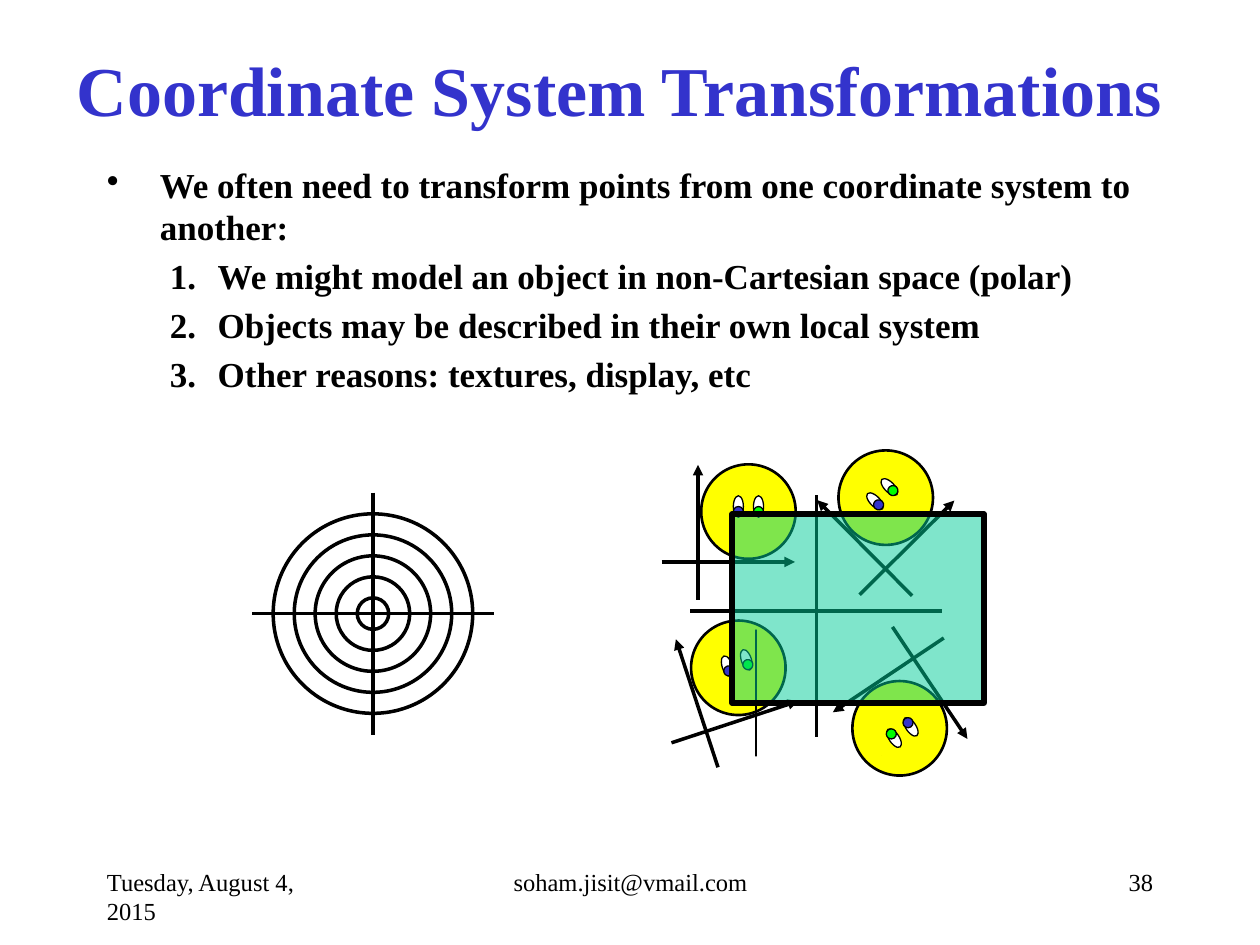
import math

from lxml import etree
from pptx import Presentation
from pptx import util as u
from pptx.dml.color import RGBColor
from pptx.enum import shapes, text
from pptx.oxml import ns

COLORS = {
    "black": "000000",
    "white": "FFFFFF",
    "blue": "3333CC",
    "yellow": "FFFF00",
    "green": "00FF00",
    "teal": "00CC99",
}
FONT = "Times New Roman"
ALIGN = text.PP_ALIGN

# Face centre and rotation in degrees, from back to front
FACES = [(7.03, 3.95, -44.8), (5.86, 5.3, -18.2), (7.14, 5.78, 146.2), (5.94, 4.06, 0)]

# Mouth outline as cubic curves, relative to the face centre
MOUTH = [
    [(-0.16, 0.13), (-0.18, 0.15), (-0.05, 0.22), (0.01, 0.22)],
    [(0.01, 0.22), (0.06, 0.22), (0.2, 0.15), (0.17, 0.13)],
    [(0.17, 0.13), (0.14, 0.12), (-0.13, 0.12), (-0.16, 0.13)],
]


def color(name):
    return RGBColor.from_string(COLORS[name])


def add_xml(parent, tag, **attributes):
    return etree.SubElement(parent, ns.qn(tag), attributes)


def style_shape(shape, fill, width):
    shape.shadow.inherit = False
    if fill:
        shape.fill.solid()
        shape.fill.fore_color.rgb = color(fill)
    else:
        shape.fill.background()
    shape.line.color.rgb = color("black")
    shape.line.width = u.Pt(width)


def add_ellipse(parent, center, width, height, fill=None, line=0.75, angle=0):
    x, y = center
    ellipse = parent.shapes.add_shape(
        shapes.MSO_SHAPE.OVAL, u.Inches(x - width / 2), u.Inches(y - height / 2),
        u.Inches(width), u.Inches(height))
    style_shape(ellipse, fill, line)
    ellipse.rotation = angle % 360


def add_line(parent, start, end, arrow=False):
    line = parent.shapes.add_connector(
        shapes.MSO_CONNECTOR.STRAIGHT, *[u.Inches(v) for v in (*start, *end)])
    line.line.color.rgb = color("black")
    line.line.width = u.Pt(2)
    if arrow:
        add_xml(line.line._get_or_add_ln(), "a:tailEnd", type="triangle")
    add_xml(line._element.spPr, "a:effectLst")


def add_text(page, box_area, lines, size, bold=False, fill="black", align=ALIGN.LEFT):
    box = page.shapes.add_textbox(*[u.Inches(v) for v in box_area])
    frame = box.text_frame
    frame.word_wrap = True
    frame.text = "\n".join(lines)
    for para in frame.paragraphs:
        para.alignment = align
        for span in para.runs:
            span.font.name = FONT
            span.font.size = u.Pt(size)
            span.font.bold = bold
            span.font.color.rgb = color(fill)
    return frame


def add_body(page):
    frame = add_text(page, (0.75, 1.25, 8.5, 2), [
        "We often need to transform points from one coordinate system to another:",
        "We might model an object in non-Cartesian space (polar)",
        "Objects may be described in their own local system",
        "Other reasons: textures, display, etc",
    ], 20, bold=True)
    for index, para in enumerate(frame.paragraphs):
        para.level = min(index, 1)
        para.space_before = u.Pt(4)
        margin, hanging = (0.88, 0.38) if index else (0.42, 0.42)
        properties = para._p.get_or_add_pPr()
        properties.set("marL", str(u.Inches(margin)))
        properties.set("indent", str(-u.Inches(hanging)))
        if index:
            add_xml(properties, "a:buFont", typeface="+mj-lt")
            add_xml(properties, "a:buAutoNum", type="arabicPeriod")
        else:
            add_xml(properties, "a:buChar", char="•")


def add_polar_grid(page):
    group = page.shapes.add_group_shape()
    x, y, reach = 2.96, 4.87, 0.96
    for ring in range(4, -1, -1):
        diameter = 0.25 + ring / 3
        add_ellipse(group, (x, y), diameter, diameter, line=2)
    add_line(group, (x, y - reach), (x, y + reach))
    add_line(group, (x - reach, y), (x + reach, y))


def curve_point(curve, t):
    weights = ((1 - t) ** 3, 3 * t * (1 - t) ** 2, 3 * t * t * (1 - t), t ** 3)
    return [sum(w * point[axis] for w, point in zip(weights, curve)) for axis in (0, 1)]


def add_face(page, x, y, angle):
    group = page.shapes.add_group_shape()
    cosine, sine = math.cos(math.radians(angle)), math.sin(math.radians(angle))

    def place(dx, dy):
        return x + cosine * dx - sine * dy, y + sine * dx + cosine * dy

    # Local axes
    add_line(group, place(-0.4, 0.7), place(-0.4, -0.37), arrow=True)
    add_line(group, place(-0.69, 0.4), place(0.37, 0.4), arrow=True)
    add_ellipse(group, (x, y), 0.75, 0.75, "yellow", 1.5, angle)

    # Mouth
    outline = [place(*curve_point(curve, step / 8)) for curve in MOUTH for step in range(8)]
    builder = group.shapes.build_freeform(*outline[0], scale=u.Inches(1))
    builder.add_line_segments(outline[1:], close=True)
    style_shape(builder.convert_to_shape(), "black", 0.75)

    # Eyes, then pupils
    for side in (-0.08, 0.08):
        add_ellipse(group, place(side, -0.04), 0.08, 0.17, "white", angle=angle)
    for side, fill in ((-0.08, "blue"), (0.08, "green")):
        add_ellipse(group, place(side, 0), 0.08, 0.08, fill, angle=angle)


def add_window(page):
    window = page.shapes.add_shape(
        shapes.MSO_SHAPE.RECTANGLE, u.Inches(5.81), u.Inches(4.08), u.Inches(2), u.Inches(1.5))
    style_shape(window, "teal", 3)
    fill_color = window._element.spPr.find(ns.qn("a:solidFill"))[0]
    add_xml(fill_color, "a:alpha", val="50000")


def main():
    deck = Presentation()
    deck.slide_width, deck.slide_height = u.Inches(10), u.Inches(7.5)
    page = deck.slides.add_slide(deck.slide_layouts[6])

    # Title and body
    title = add_text(page, (0.25, 0.33, 9.33, 0.75), ["Coordinate System Transformations"],
                     40, bold=True, fill="blue", align=ALIGN.CENTER)
    title.vertical_anchor = text.MSO_ANCHOR.MIDDLE
    add_body(page)

    # Polar space on the left
    add_polar_grid(page)

    # World axes, local systems and display window on the right
    add_line(page, (6.48, 3.93), (6.48, 5.85))
    add_line(page, (5.48, 4.85), (7.48, 4.85))
    for face in FACES:
        add_face(page, *face)
    add_window(page)

    # Footer
    for left, width, words, align in (
        (0.75, 2.08, "Tuesday, August 4, 2015", ALIGN.LEFT),
        (3.42, 3.17, "soham.jisit@vmail.com", ALIGN.CENTER),
        (7.17, 2.08, "38", ALIGN.RIGHT),
    ):
        add_text(page, (left, 6.83, width, 0.5), [words], 14, align=align)

    deck.save("out.pptx")


if __name__ == "__main__":
    main()
